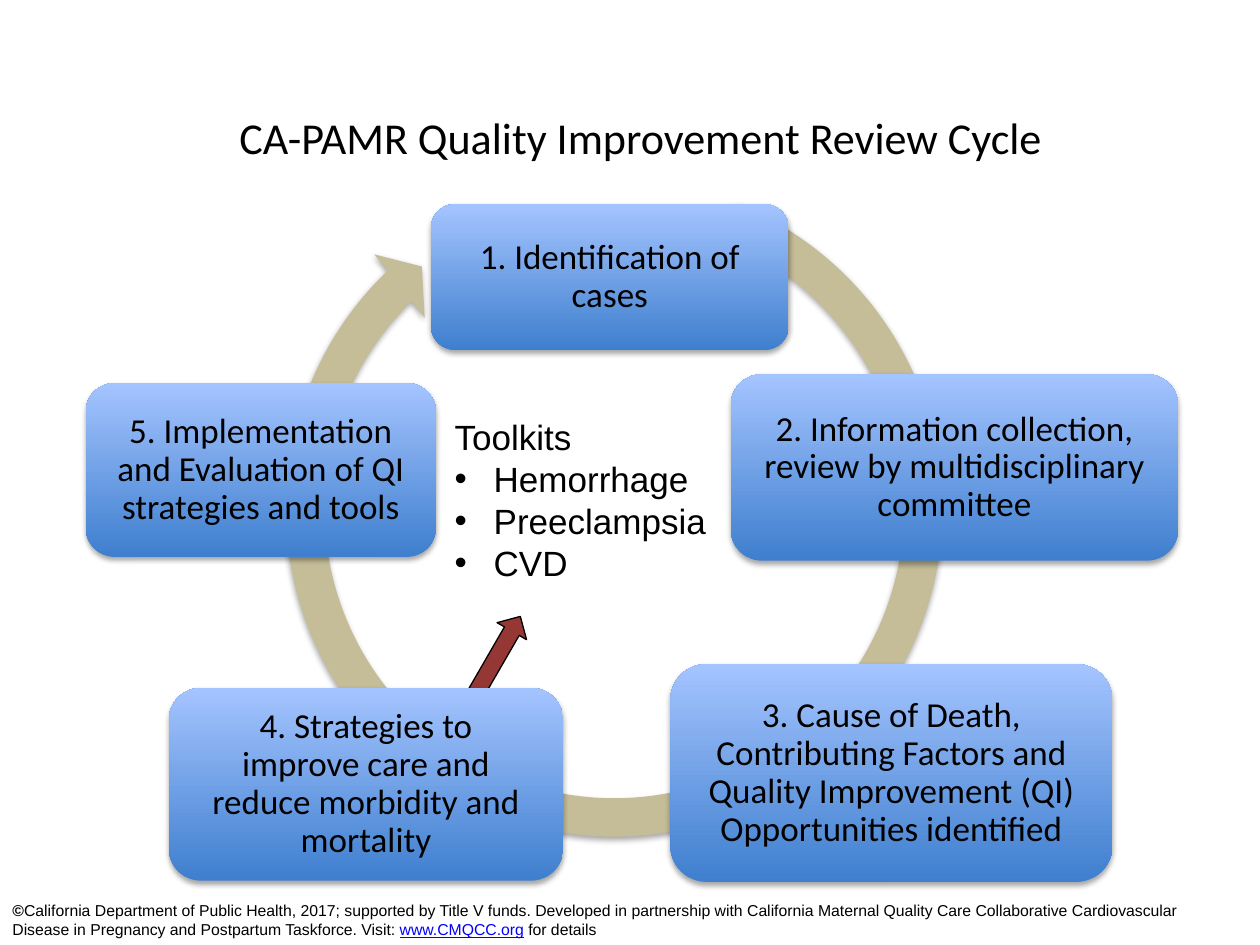
from dataclasses import dataclass
from typing import Any

from lxml.etree import SubElement
from pptx import Presentation
from pptx.dml.color import RGBColor
from pptx.enum.shapes import MSO_SHAPE as Shape
from pptx.enum.text import MSO_ANCHOR as Anchor, PP_ALIGN as Align
from pptx.oxml.ns import qn
from pptx.util import Emu, Inches, Pt

BLACK = RGBColor(0x00, 0x00, 0x00)
LINK_BLUE = RGBColor(0x00, 0x00, 0xFF)
CARD_BOTTOM = RGBColor(0x3F, 0x7F, 0xCE)
CARD_TOP = RGBColor(0xA4, 0xC4, 0xFF)
RING_TAN = RGBColor(0xC4, 0xBD, 0x97)
ARROW_RED = RGBColor(0x95, 0x37, 0x35)

COLUMNS, ROWS = 100, 75
SLIDE_WIDTH, SLIDE_HEIGHT = Inches(10), Inches(7.5)


@dataclass(frozen=True)
class Area:
    column: float
    row: float
    columns: float
    rows: float

    def lengths(self) -> tuple[Emu, Emu, Emu, Emu]:
        across, down = SLIDE_WIDTH / COLUMNS, SLIDE_HEIGHT / ROWS
        return (Emu(round(self.column * across)), Emu(round(self.row * down)),
                Emu(round(self.columns * across)), Emu(round(self.rows * down)))


@dataclass(frozen=True)
class Step:
    text: str
    area: Area


@dataclass(frozen=True)
class Span:
    text: str
    style: dict[str, Any]


STEPS = [
    Step("1. Identification of cases", Area(34.2, 16.2, 28.4, 11.6)),
    Step("2. Information collection, review by multidisciplinary committee",
         Area(58, 29.7, 35.5, 14.8)),
    Step("3. Cause of Death, Contributing Factors and Quality Improvement (QI) "
         "Opportunities identified", Area(53.2, 52.7, 35.1, 17.3)),
    Step("4. Strategies to improve care and reduce morbidity and mortality",
         Area(13.4, 54.6, 31.3, 15.3)),
    Step("5. Implementation and Evaluation of QI strategies and tools",
         Area(6.8, 30.4, 27.8, 13.8)),
]
TOOLKITS = ["Hemorrhage", "Preeclampsia", "CVD"]

CARD_FRAME = {"word_wrap": True, "vertical_anchor": Anchor.MIDDLE,
              "margin_left": Inches(0.15), "margin_right": Inches(0.15),
              "margin_top": Inches(0.15), "margin_bottom": Inches(0.15)}
CENTRED = {"alignment": Align.CENTER}
CARD_PARA = CENTRED | {"line_spacing": 0.9}
TITLE_FONT = {"name": "Calibri", "size": Pt(25.2)}
CARD_FONT = {"name": "Calibri", "size": Pt(20)}
TOOLKIT_FONT = {"name": "Arial", "size": Pt(20)}
FOOTER_FONT = {"name": "Arial", "size": Pt(9)}

FOOTER = [
    Span("©", {"bold": True}),
    Span("California Department of Public Health, 2017; supported by Title V funds. "
         "Developed in partnership with California Maternal Quality Care Collaborative "
         "Cardiovascular Disease in Pregnancy and Postpartum Taskforce. Visit: ", {}),
    Span("www.CMQCC.org", {"underline": True, "color": LINK_BLUE}),
    Span(" for details", {}),
]


def set_format(target: Any, values: dict[str, Any]) -> None:
    for name, value in values.items():
        if name == "color":
            target.color.rgb = value
        else:
            setattr(target, name, value)


def add_span(para: Any, text: str, style: dict[str, Any]) -> None:
    span = para.add_run()
    span.text = text
    set_format(span.font, {"color": BLACK} | style)


def add_bullet(para: Any) -> None:
    properties = para._p.get_or_add_pPr()
    indent = Inches(0.31)
    properties.set("marL", str(indent))
    properties.set("indent", str(-indent))
    SubElement(properties, qn("a:buFont"), typeface="Arial")
    SubElement(properties, qn("a:buChar"), char="•")


def add_soft_shadow(shape: Any) -> None:
    effects = shape._element.spPr.find(qn("a:effectLst"))
    shadow = SubElement(effects, qn("a:outerShdw"), blurRad=str(Pt(3.1)),
                        dist=str(Pt(1.8)), dir="5400000", rotWithShape="0")
    color = SubElement(shadow, qn("a:srgbClr"), val=str(BLACK))
    SubElement(color, qn("a:alpha"), val="35000")


def add_figure(page: Any, kind: Shape, area: Area, adjustments: tuple[float, ...] = ()) -> Any:
    shape = page.shapes.add_shape(kind, *area.lengths())
    for index, value in enumerate(adjustments):
        shape.adjustments[index] = value
    shape.shadow.inherit = False
    shape.line.fill.background()
    return shape


def add_text(page: Any, area: Area, anchor: Anchor = Anchor.TOP) -> Any:
    frame = page.shapes.add_textbox(*area.lengths()).text_frame
    set_format(frame, {"word_wrap": True, "vertical_anchor": anchor})
    return frame


def draw_ring(page: Any) -> None:
    ring = add_figure(page, Shape.CIRCULAR_ARROW, Area(21, 12.6, 55.5, 55.5),
                      (0.055, 3.307, 135.588, 175.196, 0.058))
    ring.fill.solid()
    ring.fill.fore_color.rgb = RING_TAN
    add_soft_shadow(ring)


def draw_toolkit_arrow(page: Any) -> None:
    arrow = add_figure(page, Shape.RIGHT_ARROW, Area(33.8, 51.9, 10, 2.7), (0.5, 0.5))
    arrow.rotation = 300
    arrow.fill.solid()
    arrow.fill.fore_color.rgb = ARROW_RED
    arrow.line.color.rgb = BLACK
    arrow.line.width = Pt(0.75)


def draw_step(page: Any, step: Step) -> None:
    card = add_figure(page, Shape.ROUNDED_RECTANGLE, step.area)
    card.fill.gradient()
    card.fill.gradient_angle = 90
    for stop, color in zip(card.fill.gradient_stops, (CARD_BOTTOM, CARD_TOP)):
        stop.color.rgb = color
    add_soft_shadow(card)
    set_format(card.text_frame, CARD_FRAME)
    para = card.text_frame.paragraphs[0]
    set_format(para, CARD_PARA)
    add_span(para, step.text, CARD_FONT)


def draw_title(page: Any) -> None:
    para = add_text(page, Area(8.3, 8.4, 85.1, 5), Anchor.MIDDLE).paragraphs[0]
    set_format(para, CENTRED)
    add_span(para, "CA-PAMR Quality Improvement Review Cycle", TITLE_FONT)


def draw_toolkits(page: Any) -> None:
    frame = add_text(page, Area(35.1, 32.5, 24.5, 14.5))
    add_span(frame.paragraphs[0], "Toolkits", TOOLKIT_FONT)
    for toolkit in TOOLKITS:
        para = frame.add_paragraph()
        add_bullet(para)
        add_span(para, toolkit, TOOLKIT_FONT)


def draw_footer(page: Any) -> None:
    para = add_text(page, Area(0, 71, 98.5, 4)).paragraphs[0]
    for span in FOOTER:
        add_span(para, span.text, FOOTER_FONT | span.style)


def main() -> None:
    deck = Presentation()
    set_format(deck, {"slide_width": SLIDE_WIDTH, "slide_height": SLIDE_HEIGHT})
    page = deck.slides.add_slide(deck.slide_layouts[6])
    draw_footer(page)
    draw_toolkit_arrow(page)
    draw_ring(page)
    for step in STEPS:
        draw_step(page, step)
    draw_toolkits(page)
    draw_title(page)
    deck.save("out.pptx")


if __name__ == "__main__":
    main()
